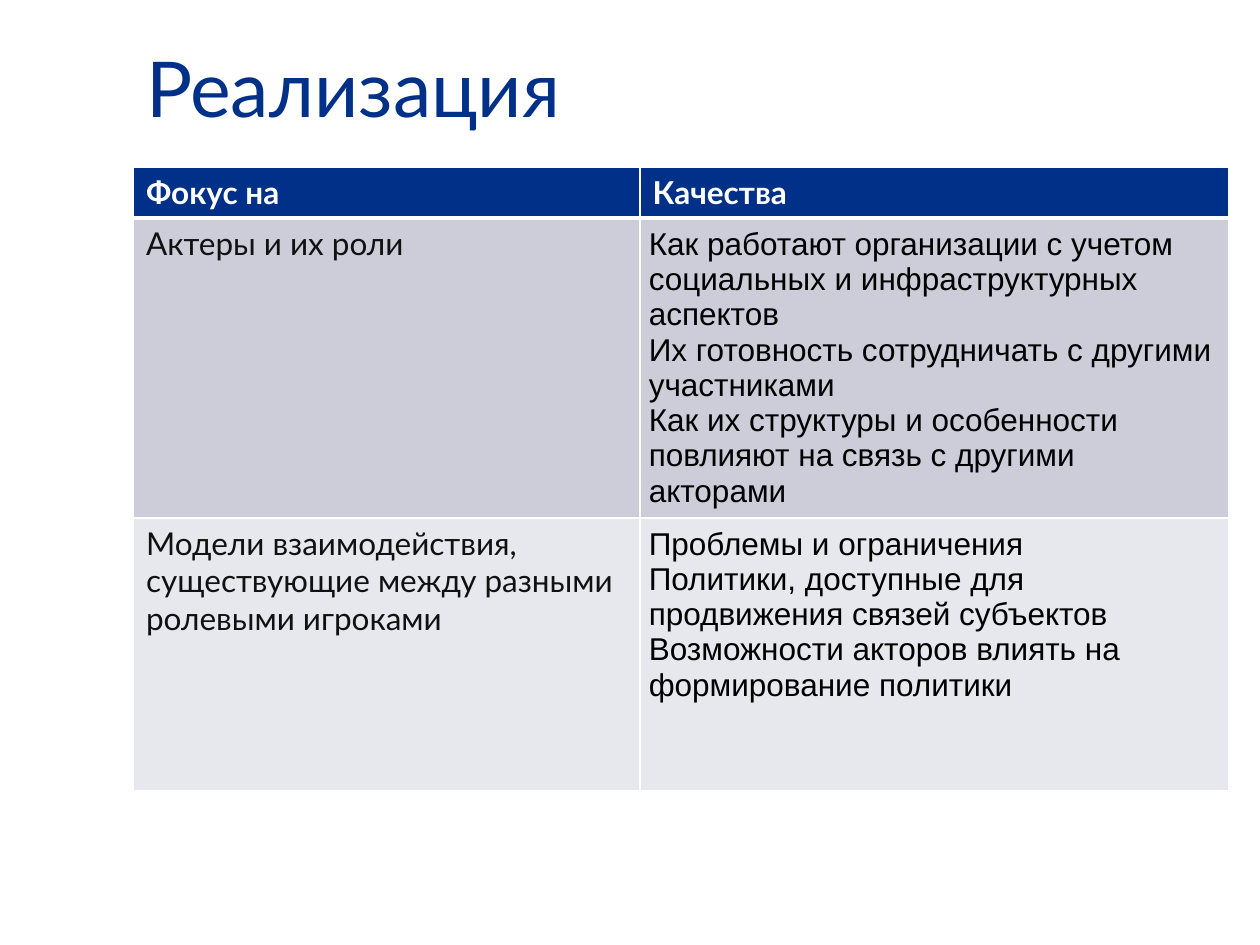
from lxml import etree
from pptx import Presentation, util as u
from pptx.dml.color import RGBColor
from pptx.enum import text
from pptx.oxml import ns

theme = {
    "navy": RGBColor.from_string("003087"),
    "white": RGBColor.from_string("FFFFFF"),
    "label": RGBColor.from_string("111111"),
    "black": RGBColor.from_string("000000"),
    "bands": [RGBColor.from_string("CCCDD9"), RGBColor.from_string("E7E8ED")],
    "heading_font": "Lato",
    "detail_font": "Arial",
    "title_size": u.Pt(44),
    "table_size": u.Pt(18),
}

rows = [
    ("Фокус на", ["Качества"]),
    ("Актеры и их роли", [
        "Как работают организации с учетом социальных и инфраструктурных аспектов",
        "Их готовность сотрудничать с другими участниками",
        "Как их структуры и особенности повлияют на связь с другими акторами",
    ]),
    ("Модели взаимодействия, существующие между разными ролевыми игроками", [
        "Проблемы и ограничения",
        "Политики, доступные для продвижения связей субъектов",
        "Возможности акторов влиять на формирование политики",
    ]),
]
column_widths = [u.Inches(4.02), u.Inches(4.67)]
row_heights = [u.Inches(0.4), u.Inches(2.17), u.Inches(2.17)]
left = u.Inches(1.06)


def style_paragraph(paragraph, font_name, size, color, bold=False):
    paragraph.alignment = text.PP_ALIGN.LEFT
    paragraph.font.name = font_name
    paragraph.font.size = size
    paragraph.font.color.rgb = color
    paragraph.font.bold = bold


def add_borders(cell, widths):
    properties = cell._tc.get_or_add_tcPr()
    for side, width in widths.items():
        line = etree.SubElement(properties, ns.qn(f"a:ln{side}"), w=str(u.Pt(width)))
        fill = etree.SubElement(line, ns.qn("a:solidFill"))
        etree.SubElement(fill, ns.qn("a:srgbClr"), val=str(theme["white"]))


presentation = Presentation()
presentation.slide_width = u.Inches(10)
presentation.slide_height = u.Inches(7.5)
slide = presentation.slides.add_slide(presentation.slide_layouts[5])

title = slide.shapes.title
title.left, title.top = left, u.Inches(0.17)
title.width, title.height = u.Inches(8.44), u.Inches(1.03)
title.text_frame.text = "Реализация"
title.text_frame.vertical_anchor = text.MSO_ANCHOR.MIDDLE
style_paragraph(title.text_frame.paragraphs[0], theme["heading_font"],
                theme["title_size"], theme["navy"])

table = slide.shapes.add_table(len(rows), 2, left, u.Inches(1.33),
                               sum(column_widths), sum(row_heights)).table
for column, width in zip(table.columns, column_widths):
    column.width = width

for row_index, (label, details) in enumerate(rows):
    table.rows[row_index].height = row_heights[row_index]
    is_header = row_index == 0
    for column_index, lines in enumerate([[label], details]):
        cell = table.cell(row_index, column_index)
        is_detail = column_index == 1 and not is_header
        cell.text = "\n".join(lines)
        if is_detail:
            cell.margin_left = cell.margin_right = u.Inches(0.07)
            cell.margin_top = cell.margin_bottom = u.Inches(0.07)
        add_borders(cell, {"L": 1, "R": 1, "T": 3 if row_index == 1 else 1,
                           "B": 3 if is_header else 1})
        cell.fill.solid()
        cell.fill.fore_color.rgb = theme["navy"] if is_header else theme["bands"][row_index - 1]
        font_name = theme["detail_font"] if is_detail else theme["heading_font"]
        color = theme["white"] if is_header else theme["black"] if is_detail else theme["label"]
        for paragraph in cell.text_frame.paragraphs:
            style_paragraph(paragraph, font_name, theme["table_size"], color, is_header)

presentation.save("out.pptx")
